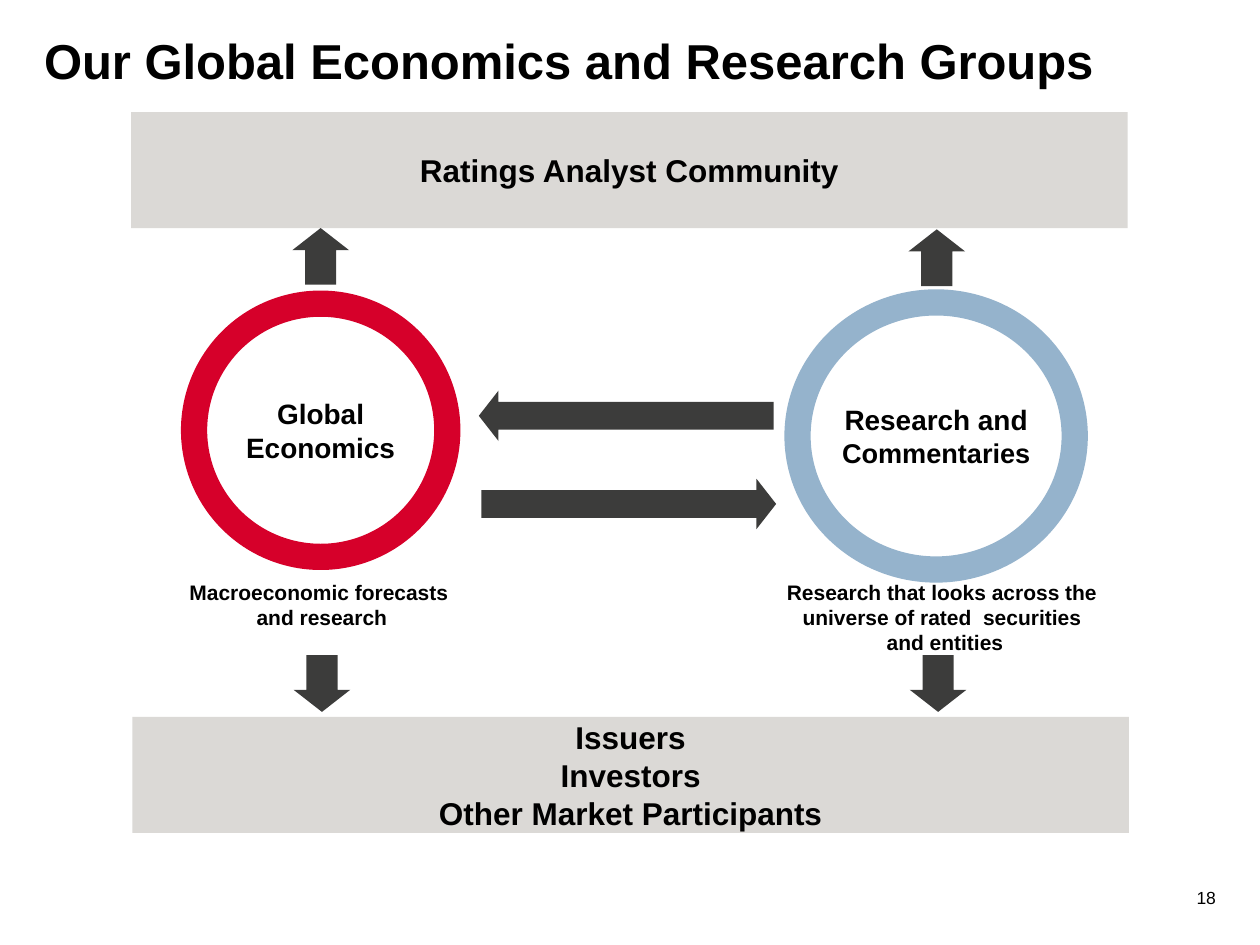
from pptx import Presentation
from pptx import util as u
from pptx.dml.color import RGBColor
from pptx.enum import shapes, text

FONT = "Arial"
BLACK, WHITE = "000000", "FFFFFF"
GREY, DARK = "DBD9D6", "3C3C3B"
RED, BLUE = "D6002A", "95B3CC"


def color(value):
    return RGBColor.from_string(value)


class Deck:
    """Holds the style and the current slide."""

    def __init__(self, width, height):
        self.prs = Presentation()
        self.prs.slide_width = u.Inches(width)
        self.prs.slide_height = u.Inches(height)
        self.s = self.prs.slides.add_slide(self.prs.slide_layouts[6])

    def style_run(self, r, size, bold=True):
        r.font.name = FONT
        r.font.size = u.Pt(size)
        r.font.bold = bold
        r.font.color.rgb = color(BLACK)

    def set_text(self, sp, content, size, bold=True,
                 align=text.PP_ALIGN.CENTER,
                 anchor=text.MSO_ANCHOR.MIDDLE, margins=(0, 0)):
        tf = sp.text_frame
        tf.text = content
        tf.word_wrap = True
        tf.vertical_anchor = anchor
        tf.margin_left = tf.margin_right = u.Inches(margins[0])
        tf.margin_top = tf.margin_bottom = u.Inches(margins[1])
        for p in tf.paragraphs:
            p.alignment = align
            for r in p.runs:
                self.style_run(r, size, bold)

    def label(self, box, content, size, **style):
        sp = self.s.shapes.add_textbox(*map(u.Inches, box))
        self.set_text(sp, content, size, anchor=text.MSO_ANCHOR.TOP, **style)

    def shape(self, kind, box, fill):
        sp = self.s.shapes.add_shape(kind, *map(u.Inches, box))
        sp.shadow.inherit = False
        sp.fill.solid()
        sp.fill.fore_color.rgb = color(fill)
        sp.line.fill.background()
        return sp

    def band(self, box, content):
        sp = self.shape(shapes.MSO_SHAPE.RECTANGLE, box, GREY)
        self.set_text(sp, content, 18, margins=(0.1, 0.05))

    def ring(self, box, content, line):
        sp = self.shape(shapes.MSO_SHAPE.OVAL, box, WHITE)
        sp.line.color.rgb = color(line)
        sp.line.width = u.Pt(15)
        self.set_text(sp, content, 16)
        return sp

    def arrow(self, box, rotation=0):
        sp = self.shape(shapes.MSO_SHAPE.RIGHT_ARROW, box, DARK)
        sp.adjustments[0], sp.adjustments[1] = 0.55, 0.39
        sp.rotation = rotation


def main():
    deck = Deck(10, 7.5)

    # Title
    deck.label((0.35, 0.24, 9.5, 0.94),
               "Our Global Economics and Research Groups", 28,
               align=text.PP_ALIGN.LEFT)

    # Captions under the two groups
    for left, width, caption in (
        (1.26, 2.59, "Macroeconomic forecasts \vand research"),
        (5.41, 4.18, "Research that looks across the \v"
                     "universe of rated  securities \vand entities"),
    ):
        deck.label((left, 4.55, width, 0.63), caption, 12, margins=(0.1, 0.05))

    # Group rings
    research = deck.ring((6.33, 2.4, 2.2, 2.12), "Research and ", BLUE)
    r = research.text_frame.paragraphs[0].add_run()
    r.text = "Commentaries"
    deck.style_run(r, 15.5)
    deck.ring((1.54, 2.41, 2.01, 2.01), "Global Economics", RED)

    # Audience bands
    deck.band((1.04, 0.89, 7.91, 0.92), "Ratings Analyst Community")
    deck.band((1.05, 5.69, 7.91, 0.92),
              "Issuers\nInvestors\nOther Market Participants")

    # Arrows from each group up and down to the bands
    for left, top in ((2.32, 1.81), (7.21, 1.82)):
        deck.arrow((left, top, 0.45, 0.45), 270)
        deck.arrow((left + 0.01, 5.2, 0.45, 0.45), 90)

    # Exchange between the groups
    deck.arrow((3.82, 3.8, 2.34, 0.4))
    deck.arrow((3.8, 3.1, 2.34, 0.4), 180)

    # Page number
    deck.label((9.42, 7.04, 0.23, 0.28), "18", 10, bold=False,
               align=text.PP_ALIGN.RIGHT)

    deck.prs.save("out.pptx")


if __name__ == "__main__":
    main()
